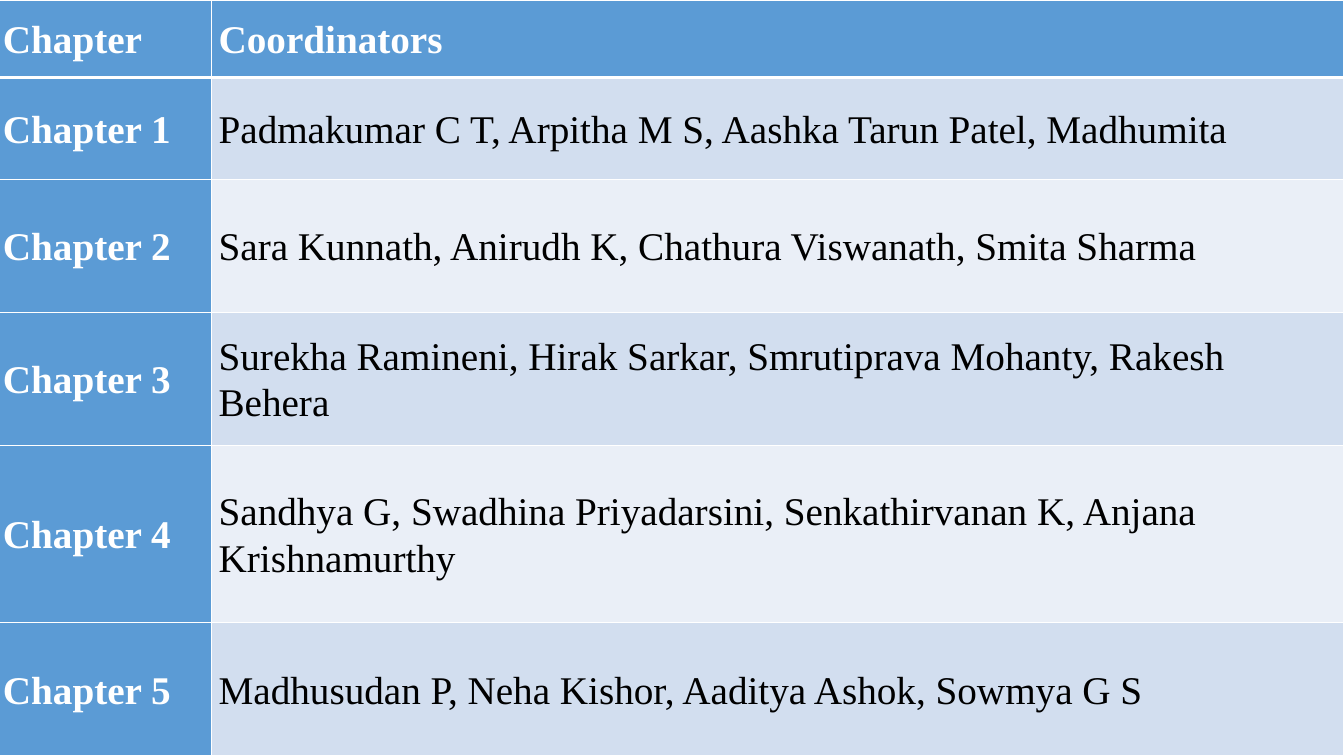
from lxml.etree import SubElement
from pptx import Presentation
from pptx.dml.color import RGBColor
from pptx.enum.text import MSO_ANCHOR
from pptx.oxml.ns import qn
from pptx.util import Pt

HEADINGS = ("Chapter", "Coordinators")
COORDINATORS = [
    "Padmakumar C T, Arpitha M S, Aashka Tarun Patel, Madhumita",
    "Sara Kunnath, Anirudh K, Chathura Viswanath, Smita Sharma",
    "Surekha Ramineni, Hirak Sarkar, Smrutiprava Mohanty, Rakesh Behera",
    "Sandhya G, Swadhina Priyadarsini, Senkathirvanan K, Anjana Krishnamurthy",
    "Madhusudan P, Neha Kishor, Aaditya Ashok, Sowmya G S",
]
ROWS = [HEADINGS] + [(f"Chapter {number}", names)
                     for number, names in enumerate(COORDINATORS, 1)]

SLIDE_WIDTH, SLIDE_HEIGHT = 960, 540
TABLE_LEFT = -2.88
COLUMN_WIDTHS = (154.08, 808.56)
ROW_HEIGHTS = (55.44, 72.72, 95.04, 95.04, 126.72, 95.04)
WHITE, BLACK, BLUE = "FFFFFF", "000000", "5B9BD5"
BANDS = ("D2DEEF", "EAEFF7")
CELL_FORMAT = {
    "vertical_anchor": MSO_ANCHOR.MIDDLE,
    "margin_left": Pt(5),
    "margin_right": Pt(5),
    "margin_top": 0,
    "margin_bottom": 0,
}
FONT_FORMAT = {"name": "Times New Roman", "size": Pt(28)}


def paint(colour_format, colour):
    colour_format.rgb = RGBColor.from_string(colour)


def add_borders(cell, widths):
    """Draw white cell borders; widths maps a side (L, R, T, B) to points."""
    properties = cell._tc.get_or_add_tcPr()
    for side, width in widths.items():
        line = SubElement(properties, qn(f"a:ln{side}"), w=str(Pt(width)))
        fill = SubElement(line, qn("a:solidFill"))
        SubElement(fill, qn("a:srgbClr"), val=WHITE)


def fill_cell(cell, text, row, column):
    is_label = row == 0 or column == 0
    for name, value in CELL_FORMAT.items():
        setattr(cell, name, value)
    add_borders(cell, {"L": 1, "R": 1, "T": 3 if row == 1 else 1,
                       "B": 3 if row == 0 else 1})
    cell.fill.solid()
    paint(cell.fill.fore_color, BLUE if is_label else BANDS[(row - 1) % 2])

    paragraph = cell.text_frame.paragraphs[0]
    paragraph.line_spacing = 1.07
    run = paragraph.add_run()
    run.text = text
    for name, value in FONT_FORMAT.items():
        setattr(run.font, name, value)
    run.font.bold = is_label
    paint(run.font.color, WHITE if is_label else BLACK)


def main():
    deck = Presentation()
    deck.slide_width, deck.slide_height = Pt(SLIDE_WIDTH), Pt(SLIDE_HEIGHT)
    slide = deck.slides.add_slide(deck.slide_layouts[6])
    table = slide.shapes.add_table(
        len(ROWS), len(HEADINGS), Pt(TABLE_LEFT), 0,
        Pt(sum(COLUMN_WIDTHS)), Pt(sum(ROW_HEIGHTS))).table
    table.first_col = True
    for column, width in zip(table.columns, COLUMN_WIDTHS):
        column.width = Pt(width)
    for row, height in zip(table.rows, ROW_HEIGHTS):
        row.height = Pt(height)
    for row, texts in enumerate(ROWS):
        for column, text in enumerate(texts):
            fill_cell(table.cell(row, column), text, row, column)
    deck.save("out.pptx")


if __name__ == "__main__":
    main()
